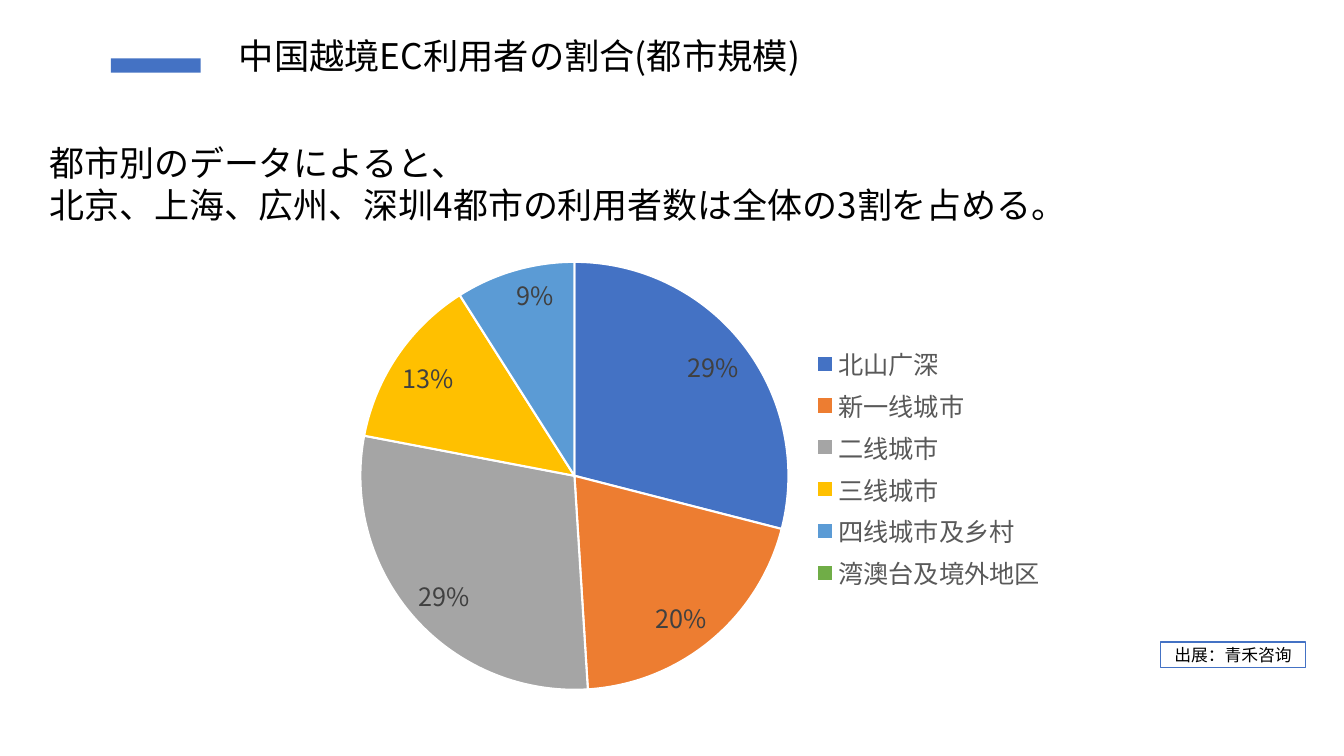
from lxml import etree
from pptx import Presentation
from pptx.chart.data import CategoryChartData
from pptx.dml.color import RGBColor
from pptx.enum.chart import XL_CHART_TYPE, XL_LABEL_POSITION as LabelPos, XL_LEGEND_POSITION as LegendPos
from pptx.enum.shapes import MSO_SHAPE as Shape
from pptx.enum.text import MSO_ANCHOR as Anchor, PP_ALIGN as Align
from pptx.oxml import parse_xml
from pptx.oxml.ns import nsdecls, qn
from pptx.util import Inches, Pt

BLACK = RGBColor(0x00, 0x00, 0x00)
WHITE = RGBColor(0xFF, 0xFF, 0xFF)
BLUE = RGBColor(0x44, 0x72, 0xC4)
LABEL_GREY = RGBColor(0x40, 0x40, 0x40)
LEGEND_GREY = RGBColor(0x59, 0x59, 0x59)
JAPANESE = "Noto Sans CJK JP"
CHINESE = "Noto Sans CJK SC"

# City tier, share in percent, slice colour
CITY_TIERS = [
    ("北山广深", 29, BLUE),
    ("新一线城市", 20, RGBColor(0xED, 0x7D, 0x31)),
    ("二线城市", 29, RGBColor(0xA5, 0xA5, 0xA5)),
    ("三线城市", 13, RGBColor(0xFF, 0xC0, 0x00)),
    ("四线城市及乡村", 9, RGBColor(0x5B, 0x9B, 0xD5)),
    ("湾澳台及境外地区", 0, RGBColor(0x70, 0xAD, 0x47)),
]


def set_font(font, size, color, name=JAPANESE):
    """Set size, colour and typeface, for Latin and East Asian text."""
    font.size = Pt(size)
    font.color.rgb = color
    font.name = name
    latin = font._element.find(qn("a:latin"))
    latin.addnext(parse_xml(f'<a:ea {nsdecls("a")} typeface="{name}"/>'))


def add_text(page, box, lines, size, spacing, space_after=0):
    frame = page.shapes.add_textbox(*map(Inches, box)).text_frame
    frame.word_wrap = True
    frame.vertical_anchor = Anchor.MIDDLE
    frame.text = "\n".join(lines)
    for para in frame.paragraphs:
        para.line_spacing = spacing
        para.space_after = Pt(space_after)
        set_font(para.font, size, BLACK)


def add_box(page, box, fill, line=None):
    shape = page.shapes.add_shape(Shape.RECTANGLE, *map(Inches, box))
    shape.shadow.inherit = False
    shape.fill.solid()
    shape.fill.fore_color.rgb = fill
    if line is None:
        shape.line.fill.background()
    else:
        shape.line.color.rgb = line
        shape.line.width = Pt(1)
    return shape


def add_heading(page, left, top, width, height):
    add_box(page, (left, top + 0.26, 0.89, 0.14), BLUE)
    add_text(page, (left + 1.17, top, width - 1.17, height),
             ["中国越境EC利用者の割合(都市規模)"], 25.2, 0.9)


def add_source(page, box):
    frame = add_box(page, box, WHITE, BLUE).text_frame
    frame.vertical_anchor = Anchor.MIDDLE
    frame.word_wrap = True
    frame.text = "出展：青禾咨询"
    para = frame.paragraphs[0]
    para.alignment = Align.CENTER
    set_font(para.font, 12, BLACK, CHINESE)


def place_plot(chart, x, y, w, h):
    """Fix the inner plot area, as fractions of the chart."""
    plot_area = chart._chartSpace.chart.plotArea
    for old in plot_area.findall(qn("c:layout")):
        plot_area.remove(old)
    layout = etree.Element(qn("c:layout"))
    manual = etree.SubElement(layout, qn("c:manualLayout"))
    settings = [("layoutTarget", "inner"), ("xMode", "edge"), ("yMode", "edge"),
                ("x", x), ("y", y), ("w", w), ("h", h)]
    for tag, value in settings:
        etree.SubElement(manual, qn(f"c:{tag}")).set("val", str(value))
    plot_area.insert(0, layout)


def add_city_pie(page, box):
    names, shares, colors = zip(*CITY_TIERS)
    data = CategoryChartData()
    data.categories = names
    data.add_series("Series 1", shares)
    chart = page.shapes.add_chart(XL_CHART_TYPE.PIE, *map(Inches, box), data).chart
    chart.has_title = False
    set_font(chart.font, 18, BLACK)
    place_plot(chart, 0.096, 0.054, 0.556, 0.925)

    # Legend
    chart.has_legend = True
    chart.legend.position = LegendPos.RIGHT
    chart.legend.include_in_layout = False
    set_font(chart.legend.font, 18, LEGEND_GREY)

    # Slices
    chart.plots[0].vary_by_categories = True
    series = chart.plots[0].series[0]
    for index, color in enumerate(colors):
        slice_format = series.points[index].format
        slice_format.fill.solid()
        slice_format.fill.fore_color.rgb = color
        slice_format.line.color.rgb = WHITE
        slice_format.line.width = Pt(1.5)

    # Percent labels, none on the empty last slice
    labels = series.data_labels
    labels.show_percentage = True
    labels.show_value = False
    labels.number_format = "0%"
    labels.number_format_is_linked = False
    labels.position = LabelPos.INSIDE_END
    set_font(labels.font, 18, LABEL_GREY)
    labels._element.insert(0, parse_xml(
        f'<c:dLbl {nsdecls("c")}><c:idx val="{len(names) - 1}"/>'
        '<c:delete val="1"/></c:dLbl>'))


def main():
    deck = Presentation()
    deck.slide_width, deck.slide_height = Inches(13.33), Inches(7.5)
    page = deck.slides.add_slide(deck.slide_layouts[6])
    add_heading(page, 1.1, 0.32, 11.13, 0.52)
    add_text(page, (0.39, 0.21, 11.03, 3.3),
             ["都市別のデータによると、",
              "北京、上海、広州、深圳4都市の利用者数は全体の3割を占める。"],
             25, 0.8, 6)
    add_city_pie(page, (2.84, 2.35, 7.64, 4.59))
    add_source(page, (11.51, 6.37, 1.44, 0.25))
    deck.save("out.pptx")


if __name__ == "__main__":
    main()
